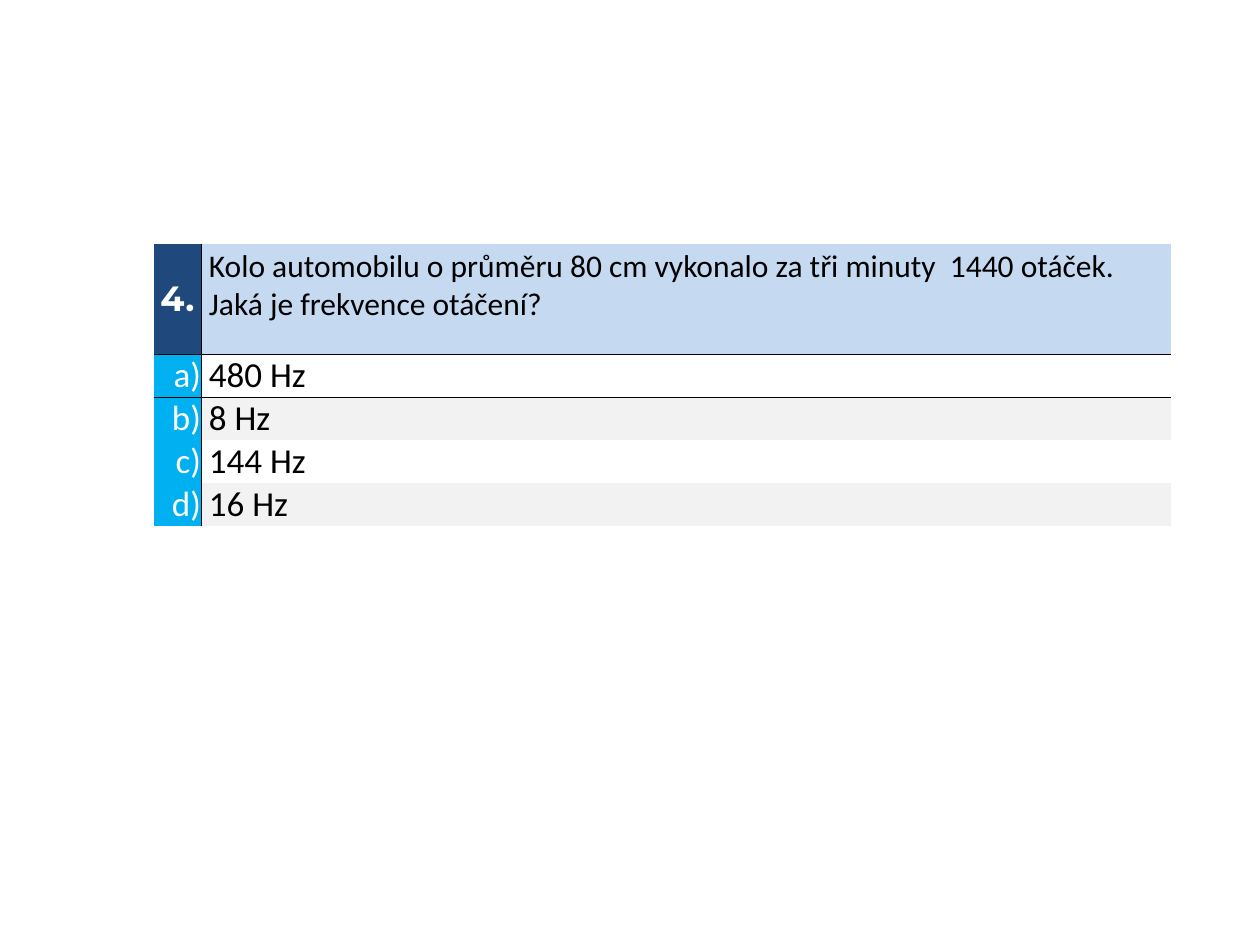
from lxml.etree import SubElement
from pptx import Presentation
from pptx.dml.color import RGBColor
from pptx.enum.text import MSO_ANCHOR as ANCHOR, PP_ALIGN as ALIGN
from pptx.oxml.ns import qn
from pptx.util import Pt

PX = 914400 // 126
NO_STYLE = "{2D5ABB26-0587-4C30-8999-92F81FD0307C}"
QUESTION = ("4.", "Kolo automobilu o průměru 80 cm vykonalo za tři minuty  1440 otáček.\u00a0\n"
            "Jaká je frekvence otáčení?")
ANSWERS = [("a)", "480 Hz"), ("b)", "8 Hz"), ("c)", "144 Hz"), ("d)", "16 Hz")]
LEFT, TOP = 154, 244
COLS = [47, 970]
ROWS = [110] + [43] * len(ANSWERS)

NUMBER = dict(fill="1F497D", color="FFFFFF", align=ALIGN.CENTER, anchor=ANCHOR.MIDDLE,
              font=dict(name="Montserrat", size=Pt(20), bold=True))
TASK = dict(fill="C5D9F1", color="000000", align=ALIGN.LEFT, anchor=ANCHOR.TOP,
            font=dict(name="Calibri", size=Pt(18), bold=False), left=8, top=3)
LETTER = dict(fill="00B0F0", color="FFFFFF", align=ALIGN.RIGHT, anchor=ANCHOR.MIDDLE,
              font=dict(name="Calibri", size=Pt(20), bold=False))
ANSWER = dict(color="000000", align=ALIGN.LEFT, anchor=ANCHOR.BOTTOM,
              font=dict(name="Calibri", size=Pt(20), bold=False), left=8)


def rgb(value):
    """Turn a hex string into a colour."""
    return RGBColor.from_string(value)


def add_borders(cell, sides):
    """Draw thin black lines on the given sides of a cell."""
    for side in sides:
        ln = SubElement(cell._tc.get_or_add_tcPr(), qn(f"a:ln{side}"), w=str(Pt(0.5)))
        SubElement(SubElement(ln, qn("a:solidFill")), qn("a:srgbClr"), val="000000")


def fill_cell(cell, text, look, sides):
    """Write and format one cell."""
    add_borders(cell, sides)
    if look.get("fill"):
        cell.fill.solid()
        cell.fill.fore_color.rgb = rgb(look["fill"])
    else:
        cell.fill.background()
    for side in ("left", "right", "top", "bottom"):
        setattr(cell, f"margin_{side}", look.get(side, 0) * PX)
    cell.vertical_anchor = look["anchor"]
    cell.text_frame.text = text
    for p in cell.text_frame.paragraphs:
        p.alignment = look["align"]
        for r in p.runs:
            r.font.color.rgb = rgb(look["color"])
            for key, value in look["font"].items():
                setattr(r.font, key, value)


def main():
    """Build the quiz slide."""
    prs = Presentation()
    prs.slide_width, prs.slide_height = 1260 * PX, 945 * PX
    s = prs.slides.add_slide(prs.slide_layouts[6])
    table = s.shapes.add_table(len(ROWS), len(COLS), LEFT * PX, TOP * PX,
                               sum(COLS) * PX, sum(ROWS) * PX).table
    table.first_row = table.horz_banding = False
    table._tbl.tblPr.find(qn("a:tableStyleId")).text = NO_STYLE
    for col, width in zip(table.columns, COLS):
        col.width = width * PX
    for row, height in zip(table.rows, ROWS):
        row.height = height * PX
    for i, (label, text) in enumerate([QUESTION] + ANSWERS):
        edge = {0: "B", 1: "T"}.get(i, "")
        band = dict(ANSWER, fill=None if i % 2 else "F2F2F2")
        fill_cell(table.cell(i, 0), label, LETTER if i else NUMBER, "R" + edge)
        fill_cell(table.cell(i, 1), text, band if i else TASK, "L" + edge)
    prs.save("out.pptx")


if __name__ == "__main__":
    main()
